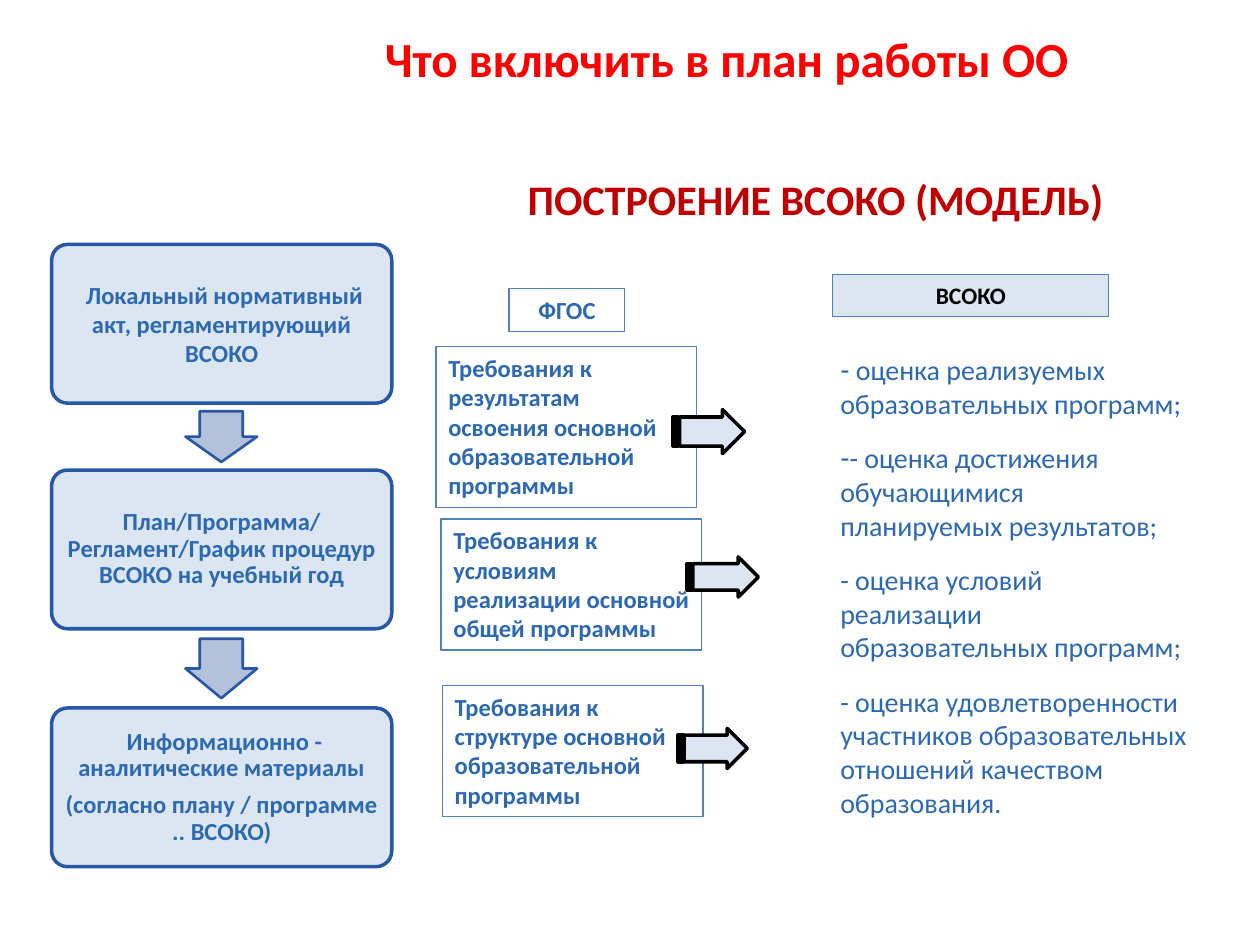
from dataclasses import dataclass

from pptx import Presentation
from pptx.dml.color import RGBColor
from pptx.enum.shapes import MSO_SHAPE
from pptx.enum.text import MSO_ANCHOR, MSO_AUTO_SIZE, PP_ALIGN
from pptx.oxml.xmlchemy import OxmlElement
from pptx.util import Pt

CENTER, LEFT = PP_ALIGN.CENTER, PP_ALIGN.LEFT
TOP, MIDDLE = MSO_ANCHOR.TOP, MSO_ANCHOR.MIDDLE
RECT, ROUNDED = MSO_SHAPE.RECTANGLE, MSO_SHAPE.ROUNDED_RECTANGLE
DOWN, STRIPED = MSO_SHAPE.DOWN_ARROW, MSO_SHAPE.STRIPED_RIGHT_ARROW

WHITE = RGBColor(0xFF, 0xFF, 0xFF)
BLACK = RGBColor(0, 0, 0)
RED = RGBColor(0xFF, 0, 0)
DARK_RED = RGBColor(0xC0, 0, 0)
PALE_BLUE = RGBColor(0xDC, 0xE6, 0xF2)
GREY_BLUE = RGBColor(0xB3, 0xC1, 0xDB)
DEEP_BLUE = RGBColor(0x28, 0x57, 0xA5)
LINE_BLUE = RGBColor(0x4F, 0x81, 0xBD)
TEXT_BLUE = RGBColor(0x2C, 0x69, 0xB2)


@dataclass
class Box:
    left: float
    top: float
    width: float
    height: float

    def lengths(self):
        return [Pt(v) for v in (self.left, self.top, self.width, self.height)]


@dataclass
class Style:
    kind: int
    fill: RGBColor
    line: RGBColor
    weight: float
    adjustments: tuple = ()


CARD = Style(ROUNDED, PALE_BLUE, DEEP_BLUE, 2, (0.1,))
DOWN_ARROW = Style(DOWN, GREY_BLUE, DEEP_BLUE, 1.5, (0.6, 0.5))
STRIPED_ARROW = Style(STRIPED, PALE_BLUE, BLACK, 2, (0.66, 0.5))
WHITE_BOX = Style(RECT, WHITE, LINE_BLUE, 0.75)
BLUE_BOX = Style(RECT, PALE_BLUE, LINE_BLUE, 0.75)


def add_shape(s, box: Box, style: Style):
    sp = s.shapes.add_shape(style.kind, *box.lengths())
    sp.shadow.inherit = False
    sp.fill.solid()
    sp.fill.fore_color.rgb = style.fill
    sp.line.color.rgb = style.line
    sp.line.width = Pt(style.weight)
    for i, value in enumerate(style.adjustments):
        sp.adjustments[i] = value
    return sp


def write(sp, lines: list[str], size: float, color: RGBColor, bold=True, align=CENTER,
          anchor=TOP, inset=(7.2, 3.6), spacing=1.0, after: float = 0):
    tf = sp.text_frame
    tf.word_wrap = True
    tf.auto_size = MSO_AUTO_SIZE.NONE
    tf.vertical_anchor = anchor
    tf.margin_left = tf.margin_right = Pt(inset[0])
    tf.margin_top = tf.margin_bottom = Pt(inset[1])
    for i, line in enumerate(lines):
        p = tf.paragraphs[0] if i == 0 else tf.add_paragraph()
        p.text = line
        p.alignment = align
        p.line_spacing = spacing
        p.space_before = Pt(0)
        p.space_after = Pt(after)
        p.font.name, p.font.size, p.font.bold = "Calibri", Pt(size), bold
        p.font.color.rgb = color


def set_bullet(p, char: str = ""):
    """Remove the hanging indent and set the bullet, or switch it off."""
    pPr = p._p.get_or_add_pPr()
    pPr.set("marL", "0")
    pPr.set("indent", "0")
    bullet = OxmlElement("a:buChar" if char else "a:buNone")
    if char:
        bullet.set("char", char)
    pPr.insert_element_before(bullet, "a:tabLst", "a:defRPr", "a:extLst")


def place(sp, box: Box):
    sp.left, sp.top, sp.width, sp.height = box.lengths()


prs = Presentation()
prs.slide_width, prs.slide_height = Pt(720), Pt(540)
s = prs.slides.add_slide(prs.slide_layouts[1])
title, body = s.placeholders

# Headings
place(title, Box(252.7, 90, 421.2, 46.8))
write(title, [" ПОСТРОЕНИЕ ВСОКО (МОДЕЛЬ)"], 24, DARK_RED, anchor=MIDDLE, inset=(5, 2.9))
heading = s.shapes.add_textbox(*Box(151.2, 13, 527.8, 41).lengths())
write(heading, ["Что включить в план работы ОО"], 28, RED)

# Document chain on the left
cards = [
    (139.7, 1.0, 0, [" Локальный нормативный акт, регламентирующий ВСОКО"]),
    (268.6, 0.9, 5.9, ["План/Программа/Регламент/График процедур ВСОКО на учебный год"]),
    (404.6, 0.9, 5.9, [" Информационно - аналитические материалы",
                       "(согласно плану / программе .. ВСОКО)"]),
]
for top, spacing, after, lines in cards:
    card = add_shape(s, Box(29.5, top, 194.4, 90.7), CARD)
    write(card, lines, 14, TEXT_BLUE, anchor=MIDDLE, inset=(4.3, 4.3),
          spacing=spacing, after=after)
for top, height in ((235, 29), (365, 34)):
    add_shape(s, Box(106, top, 41, height), DOWN_ARROW)

# Column headers
write(add_shape(s, Box(290.9, 164.9, 66.2, 24.5), WHITE_BOX), ["ФГОС"], 14, TEXT_BLUE)
write(add_shape(s, Box(475.9, 157, 157.7, 23.8), BLUE_BOX), ["ВСОКО"], 13.5, BLACK)

# Requirements, each with its arrow
requirements = [
    (Box(249.1, 198, 149.1, 92.2), Box(384.5, 234, 41, 25.2),
     "Требования к результатам освоения основной образовательной программы"),
    (Box(252, 296.6, 149.1, 74.9), Box(392.4, 318.2, 41, 23),
     "Требования к условиям реализации основной общей программы"),
    (Box(252.7, 391.7, 149.1, 74.9), Box(387.4, 416.2, 39.6, 23),
     "Требования к структуре основной образовательной программы"),
]
for box, arrow, text in requirements:
    write(add_shape(s, box, WHITE_BOX), [text], 14, TEXT_BLUE, align=LEFT)
    add_shape(s, arrow, STRIPED_ARROW)

# Assessment list
place(body, Box(473, 198, 213.1, 283.7))
write(body, [
    " оценка реализуемых образовательных программ;",
    "- оценка достижения обучающимися планируемых результатов;",
    "- оценка условий реализации образовательных программ;",
    "- оценка удовлетворенности участников образовательных отношений качеством образования.",
], 16, TEXT_BLUE, bold=False, align=LEFT, after=12)
for p, char in zip(body.text_frame.paragraphs, ("-", "-", "", "")):
    set_bullet(p, char)

prs.save("out.pptx")
